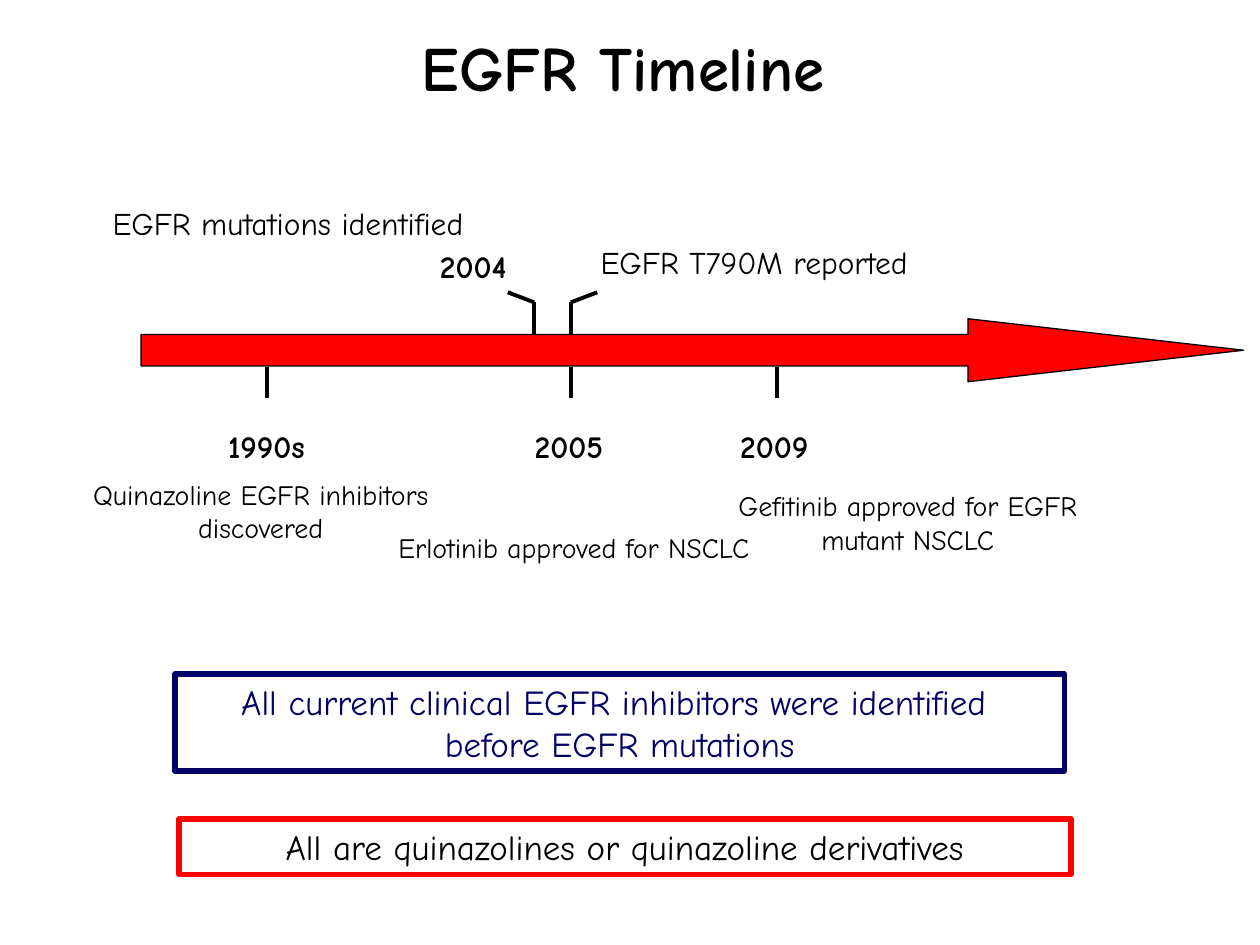
from dataclasses import dataclass

from lxml import etree
from pptx import Presentation
from pptx.dml.color import RGBColor
from pptx.enum.shapes import MSO_CONNECTOR, MSO_SHAPE
from pptx.enum.text import MSO_ANCHOR, MSO_AUTO_SIZE, PP_ALIGN
from pptx.oxml.ns import qn
from pptx.util import Inches, Pt

ARROW = MSO_SHAPE.RIGHT_ARROW
RECT = MSO_SHAPE.RECTANGLE
LINE = MSO_CONNECTOR.STRAIGHT
CENTER = PP_ALIGN.CENTER
TOP = MSO_ANCHOR.TOP
GROW = MSO_AUTO_SIZE.SHAPE_TO_FIT_TEXT


@dataclass(frozen=True)
class Theme:
    font: str = "Comic Neue"
    black: RGBColor = RGBColor(0, 0, 0)
    red: RGBColor = RGBColor(255, 0, 0)
    navy: RGBColor = RGBColor(0, 0, 0x66)
    title: int = 36
    box: int = 20
    label: int = 18
    note: int = 16
    edge: float = 0.75
    tick: float = 2.25
    frame: int = 3


theme = Theme()
deck = Presentation()
deck.slide_width, deck.slide_height = Inches(10), Inches(7.5)
slide = deck.slides.add_slide(deck.slide_layouts[6])
shapes = slide.shapes


def write(shape, text, size, color=theme.black, bold=False):
    """Fill a shape with centred text, one paragraph per line."""
    frame = shape.text_frame
    look = {"word_wrap": True, "vertical_anchor": TOP, "auto_size": GROW}
    for name, value in look.items():
        setattr(frame, name, value)
    frame.text = text
    for para in frame.paragraphs:
        para.alignment = CENTER
        font = para.runs[0].font
        style = {"name": theme.font, "size": Pt(size), "bold": bold}
        for name, value in style.items():
            setattr(font, name, value)
        font.color.rgb = color


# Time arrow
arrow = shapes.add_shape(
    ARROW, Inches(1.12), Inches(2.53), Inches(8.75), Inches(0.5))
arrow.adjustments[0] = 0.5
arrow.adjustments[1] = 4.375
arrow.shadow.inherit = False
arrow.fill.solid()
arrow.fill.fore_color.rgb = theme.red
arrow.line.color.rgb = theme.black
arrow.line.width = Pt(theme.edge)

# Ticks below the arrow, then bent ticks above it
ticks = [(x, 2.91, x, 3.16) for x in (2.12, 4.53, 6.17)]
for x, tip in ((4.24, 4.03), (4.53, 4.74)):
    ticks += [(x, 2.4, x, 2.65), (x, 2.4, tip, 2.32)]
for tick in ticks:
    line = shapes.add_connector(LINE, *map(Inches, tick))
    line.line.color.rgb = theme.black
    line.line.width = Pt(theme.tick)
    etree.SubElement(line._element.spPr, qn("a:effectLst"))

# Title, years and events: left, top, width, height, size, bold
texts = [
    ("EGFR Timeline", 2.82, 0.18, 4.25, 0.7, theme.title, True),
    ("EGFR mutations identified", 0.54, 1.57, 3.49, 0.4, theme.label, False),
    ("EGFR T790M reported", 4.24, 1.88, 3.49, 0.4, theme.label, False),
    ("Quinazoline EGFR inhibitors discovered",
     0.37, 3.74, 3.4, 0.64, theme.note, False),
    ("Erlotinib approved for NSCLC",
     3.02, 4.16, 3.07, 0.64, theme.note, False),
    ("Gefitinib approved for EGFR mutant NSCLC",
     5.67, 3.83, 3.07, 0.64, theme.note, False),
]
years = [("1990s", 1.59, 3.34), ("2005", 3.99, 3.34),
         ("2009", 5.62, 3.34), ("2004", 3.23, 1.91)]
texts += [(*year, 1.05, 0.4, theme.label, True) for year in years]
for text, *place, size, bold in texts:
    write(shapes.add_textbox(*map(Inches, place)), text, size, bold=bold)

# Framed conclusions
boxes = [
    ("All current clinical EGFR inhibitors were identified \n"
     "before EGFR mutations",
     1.39, 5.35, 7.06, 0.77, theme.navy, theme.navy),
    ("All are quinazolines or quinazoline derivatives",
     1.42, 6.5, 7.08, 0.44, theme.red, theme.black),
]
for text, *place, edge, ink in boxes:
    box = shapes.add_shape(RECT, *map(Inches, place))
    box.shadow.inherit = False
    box.fill.background()
    box.line.color.rgb = edge
    box.line.width = Pt(theme.frame)
    write(box, text, theme.box, ink)

deck.save("out.pptx")
